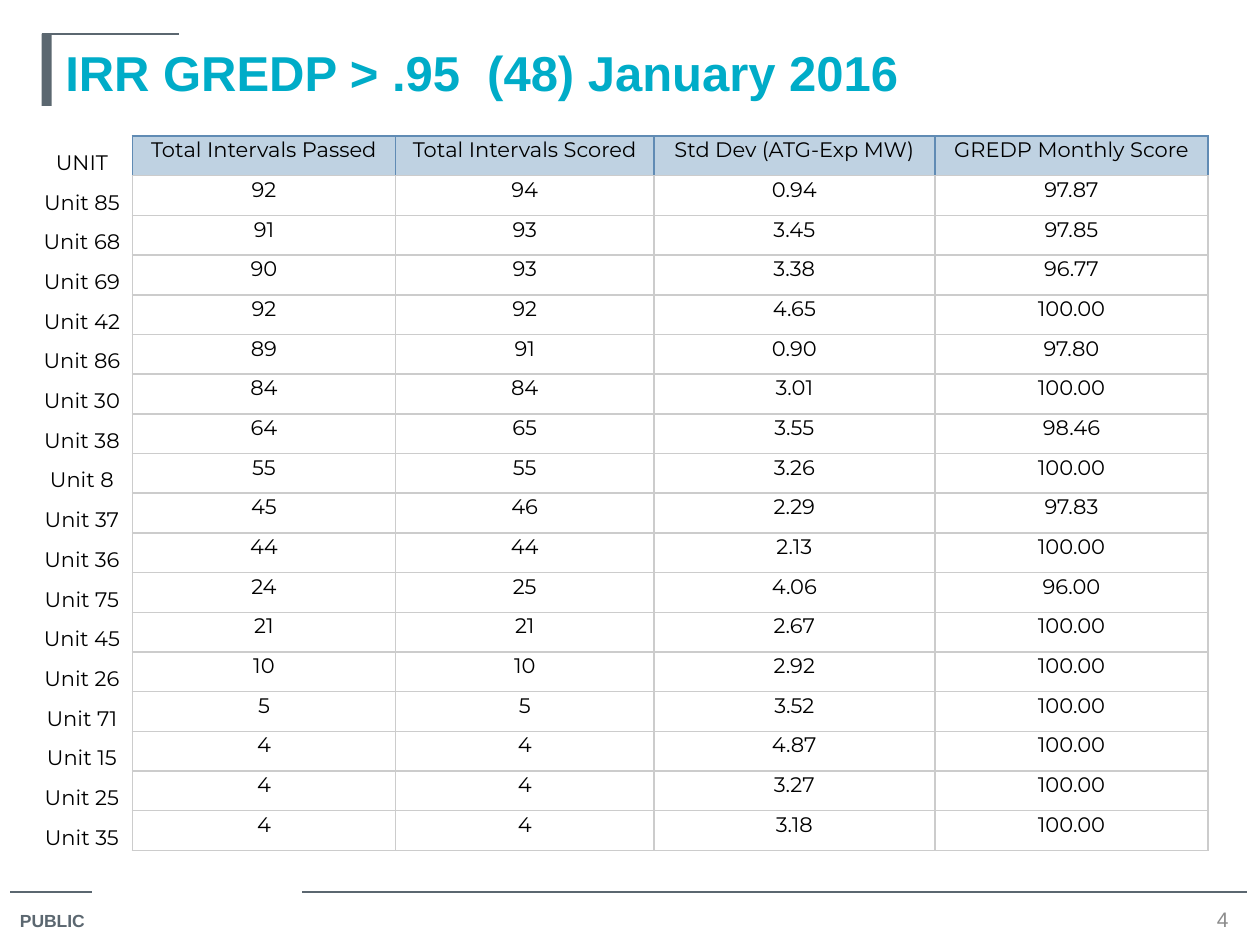
from dataclasses import dataclass

from lxml.etree import SubElement
from pptx import Presentation
from pptx.dml.color import RGBColor
from pptx.enum.shapes import MSO_CONNECTOR as Link, MSO_SHAPE as Shape
from pptx.enum.text import MSO_ANCHOR as Anchor, PP_ALIGN as Align
from pptx.oxml import parse_xml
from pptx.oxml.ns import nsdecls, qn
from pptx.util import Inches, Pt


@dataclass(frozen=True)
class Theme:
    slate: str = "5B6770"
    teal: str = "00ACC8"
    gray: str = "8C8C8C"
    black: str = "000000"
    head: str = "BFD2E2"
    blue: str = "608BB4"
    grid: str = "CCCCCC"
    sans: str = "Arial"
    body: str = "Montserrat"
    title: int = 28
    text: int = 12
    small: int = 10
    rule: float = 0.75


T = Theme()
HEADS = ["UNIT", "Total Intervals Passed", "Total Intervals Scored",
         "Std Dev (ATG-Exp MW)", "GREDP Monthly Score"]
WIDTHS = [0.8, 2.09, 2.05, 2.23, 2.17]
# Unit number, passed, scored, deviation, monthly score
UNITS = [
    (85, 92, 94, 0.94, 97.87),
    (68, 91, 93, 3.45, 97.85),
    (69, 90, 93, 3.38, 96.77),
    (42, 92, 92, 4.65, 100),
    (86, 89, 91, 0.90, 97.80),
    (30, 84, 84, 3.01, 100),
    (38, 64, 65, 3.55, 98.46),
    (8, 55, 55, 3.26, 100),
    (37, 45, 46, 2.29, 97.83),
    (36, 44, 44, 2.13, 100),
    (75, 24, 25, 4.06, 96),
    (45, 21, 21, 2.67, 100),
    (26, 10, 10, 2.92, 100),
    (71, 5, 5, 3.52, 100),
    (15, 4, 4, 4.87, 100),
    (25, 4, 4, 3.27, 100),
    (35, 4, 4, 3.18, 100),
]


def style(para, size, color, face=T.sans, bold=False, align=Align.LEFT):
    para.alignment = align
    font = para.font
    font.size, font.name, font.bold = Pt(size), face, bold
    font.color.rgb = RGBColor.from_string(color)


def add_text(slide, box, text, size, color, inset=(0.1, 0.05), wrap=True,
             anchor=Anchor.TOP, **look):
    frame = slide.shapes.add_textbox(*map(Inches, box)).text_frame
    frame.word_wrap = wrap
    frame.vertical_anchor = anchor
    frame.margin_left = frame.margin_right = Inches(inset[0])
    frame.margin_top = frame.margin_bottom = Inches(inset[1])
    para = frame.paragraphs[0]
    para.text = text
    style(para, size, color, **look)


def add_rule(slide, left, right, top):
    line = slide.shapes.add_connector(
        Link.STRAIGHT, Inches(left), Inches(top), Inches(right), Inches(top))
    line.line.color.rgb = RGBColor.from_string(T.slate)
    line.line.width = Pt(T.rule)
    SubElement(line._element.spPr, qn("a:effectLst"))


def add_header(slide, left, top, width, height):
    bar = slide.shapes.add_shape(
        Shape.RECTANGLE, *map(Inches, (left, top, 0.08, 0.57)))
    bar.shadow.inherit = False
    bar.fill.solid()
    bar.fill.fore_color.rgb = RGBColor.from_string(T.slate)
    bar.line.fill.background()
    add_rule(slide, left, left + 1.09, top)
    add_text(slide, (left + 0.09, top, width - 0.09, height),
             "IRR GREDP > .95  (48) January 2016", T.title, T.teal,
             inset=(0.1, 0.07), bold=True)


def add_footer(slide, left, top, width):
    add_rule(slide, left, left + 0.65, top)
    add_rule(slide, left + 2.32, left + width, top)
    add_text(slide, (left - 0.02, top + 0.09, 0.77, 0.28), "PUBLIC",
             T.small, T.slate, wrap=False, bold=True)
    add_text(slide, (left + width - 0.32, top + 0.1, 0.25, 0.23), "4",
             T.text, T.gray, inset=(0, 0), anchor=Anchor.MIDDLE,
             align=Align.CENTER)


def set_edges(cell, edges):
    """Draw the left, right, top and bottom edges; None leaves one off."""
    props = cell._tc.get_or_add_tcPr()
    for i, (side, color) in enumerate(zip("LRTB", edges)):
        fill = (f'<a:solidFill><a:srgbClr val="{color}"/></a:solidFill>'
                if color else "<a:noFill/>")
        props.insert(i, parse_xml(
            f'<a:ln{side} {nsdecls("a")} w="{Pt(1)}">{fill}</a:ln{side}>'))


def fill_cell(cell, text, row, col):
    cell.margin_left = cell.margin_right = cell.margin_top = Inches(0.01)
    cell.margin_bottom = 0
    cell.vertical_anchor = Anchor.TOP if col else Anchor.BOTTOM
    para = cell.text_frame.paragraphs[0]
    para.text = text
    style(para, T.text, T.black, T.body, align=Align.CENTER)
    if row == 0 and col:
        cell.fill.solid()
        cell.fill.fore_color.rgb = RGBColor.from_string(T.head)
    else:
        cell.fill.background()
    edge = T.grid if row else T.blue
    set_edges(cell, (edge, edge, edge, T.grid) if col
              else (None, edge, None, None))


def add_scores(slide, left, top, width, height):
    rows = [HEADS] + [
        [f"Unit {unit}", str(done), str(total), f"{dev:.2f}", f"{score:.2f}"]
        for unit, done, total, dev, score in UNITS]
    table = slide.shapes.add_table(
        len(rows), len(HEADS),
        *map(Inches, (left, top, width, height))).table
    table.first_row = table.horz_banding = False
    for column, size in zip(table.columns, WIDTHS):
        column.width = Inches(size)
    for r, texts in enumerate(rows):
        table.rows[r].height = Inches(height / len(rows))
        for c, text in enumerate(texts):
            fill_cell(table.cell(r, c), text, r, c)


def main():
    deck = Presentation()
    deck.slide_width, deck.slide_height = Inches(10), Inches(7.5)
    slide = deck.slides.add_slide(deck.slide_layouts[6])
    add_footer(slide, 0.08, 7.08, 9.82)
    add_header(slide, 0.33, 0.27, 9.34, 0.73)
    add_scores(slide, 0.25, 1.08, sum(WIDTHS), 5.67)
    deck.save("out.pptx")


if __name__ == "__main__":
    main()
